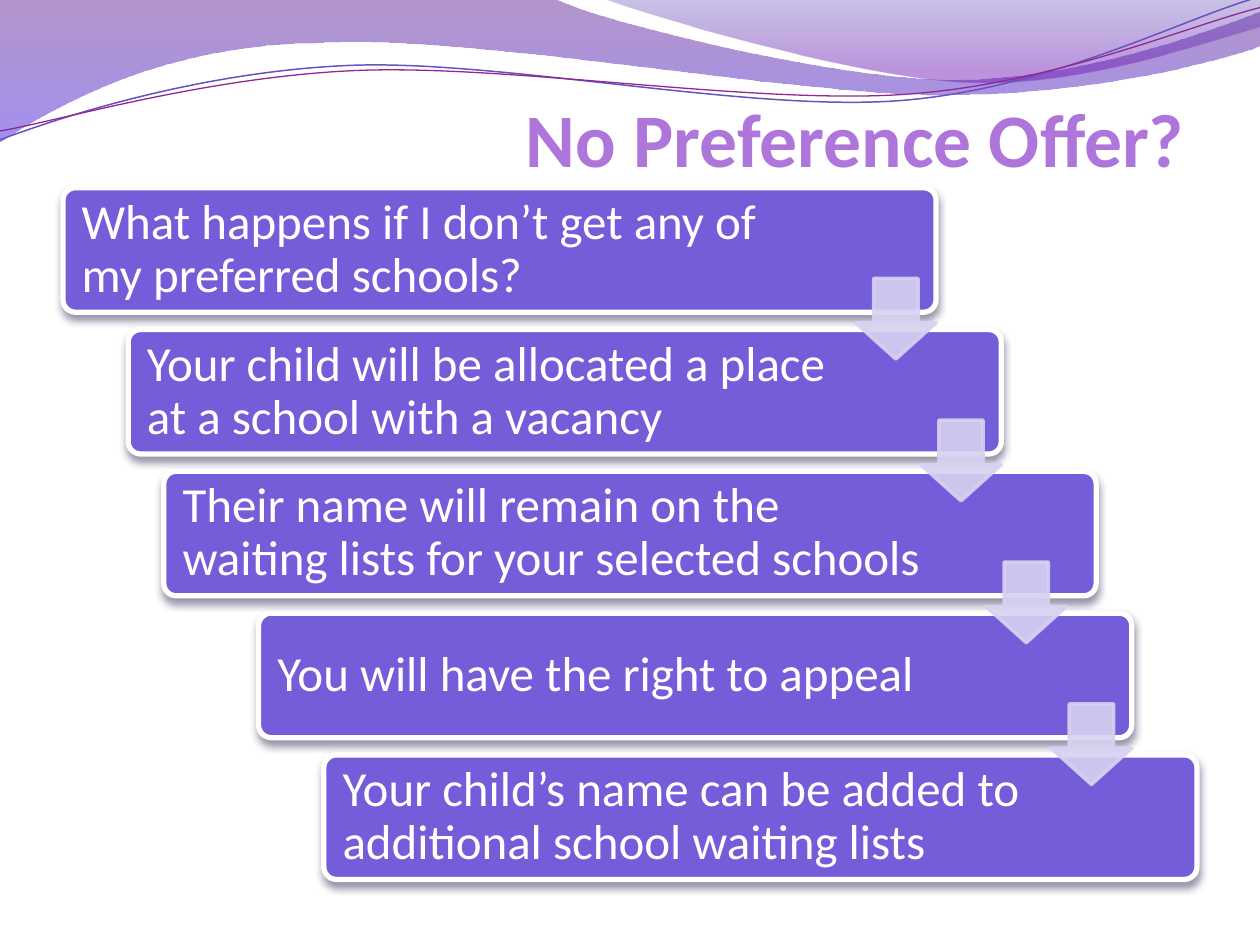
from dataclasses import dataclass

from lxml import etree
from pptx import Presentation
from pptx.dml.color import RGBColor
from pptx.enum.shapes import MSO_SHAPE
from pptx.enum.text import MSO_ANCHOR, PP_ALIGN
from pptx.oxml.ns import qn
from pptx.util import Inches, Pt

ROUNDED, DOWN_ARROW = MSO_SHAPE.ROUNDED_RECTANGLE, MSO_SHAPE.DOWN_ARROW
MIDDLE, BOTTOM = MSO_ANCHOR.MIDDLE, MSO_ANCHOR.BOTTOM
LEFT, RIGHT = PP_ALIGN.LEFT, PP_ALIGN.RIGHT
TITLE_ONLY = 5


@dataclass(frozen=True)
class Theme:
    """Colours, font and type sizes of the deck."""
    font: str = "Calibri"
    title: str = "AE76DB"
    card: str = "755DD9"
    paper: str = "FFFFFF"
    arrow: str = "D6D2F1"
    shadow: str = "28204D"
    title_size: float = 43.2
    card_size: float = 28


THEME = Theme()

BANDS = [
    ([(0, -0.01), [(4.4, -0.01)],
      [(4.76, 0.17), (6.64, 0.63), (7.58, 0.63)],
      [(8.53, 0.63), (9.58, 0.26), (10, 0.09)], [(10.01, 0.36)],
      [(9.83, 0.44), (8.7, 0.76), (7.46, 0.75)],
      [(6.22, 0.75), (3.82, 0.28), (2.57, 0.34)],
      [(1.29, 0.35), (0.46, 0.83), (-0.01, 1.13)]],
     [(0, "58188D", 45), (1, "5735E4", 55)]),
    ([(4.79, -0.01),
      [(5.09, 0.11), (6.82, 0.62), (7.69, 0.65)],
      [(8.56, 0.69), (9.61, 0.32), (10, 0.21)], [(10, 0)]],
     [(0, "4E37AE", 30), (0.8, "6A11B3", 45)]),
]
STRANDS = [
    ([(0, 1.11),
      [(0.48, 0.93), (1.58, 0.57), (2.77, 0.52)],
      [(3.95, 0.47), (5.93, 0.89), (7.13, 0.8)],
      [(8.33, 0.71), (9.38, 0.15), (9.98, -0.02)]], "6752BF", 0.85),
    ([(0, 1.04),
      [(0.47, 0.96), (1.64, 0.61), (2.83, 0.56)],
      [(4.03, 0.51), (5.97, 0.83), (7.17, 0.75)],
      [(8.36, 0.67), (9.41, 0.21), (10, 0.06)]], "92278F", 0.75),
]
STEPS = [
    ("What happens if I don’t get any of my preferred schools?", 6.93),
    ("Your child will be allocated a place at a school with a vacancy", 6.93),
    ("Their name will remain on the waiting lists for your selected schools", 7.4),
    ("You will have the right to appeal", 6.93),
    ("Your child’s name can be added to additional school waiting lists", 6.93),
]


def rgb(code):
    """Turn a hex code into a colour."""
    return RGBColor.from_string(code)


def set_opacity(shape, percents):
    """Give the colours of a shape their opacity, in order."""
    for color, percent in zip(shape.element.spPr.iter(qn("a:srgbClr")), percents):
        etree.SubElement(color, qn("a:alpha")).set("val", str(percent * 1000))


def add_shadow(shape):
    """Put a soft shadow below a shape."""
    effects = shape.element.spPr.find(qn("a:effectLst"))
    outer = etree.SubElement(effects, qn("a:outerShdw"), blurRad=str(Pt(4.5)),
                             dist=str(Pt(3)), dir="5400000", rotWithShape="0")
    color = etree.SubElement(outer, qn("a:srgbClr"), val=THEME.shadow)
    etree.SubElement(color, qn("a:alpha"), val="48000")


def add_span(para, text, size, color, bold=False):
    """Add one formatted run to a paragraph."""
    span = para.add_run()
    span.text = text
    span.font.name, span.font.size, span.font.bold = THEME.font, Pt(size), bold
    span.font.color.rgb = rgb(color)


def bend(shape, segments):
    """Join each three-point segment of a freeform into one cubic curve."""
    path = next(shape.element.spPr.iter(qn("a:path")))
    lines = iter(path.findall(qn("a:lnTo")))
    for segment in segments:
        group = [next(lines) for _ in segment]
        if len(group) == 3:
            curve = etree.Element(qn("a:cubicBezTo"))
            group[0].addprevious(curve)
            for line in group:
                curve.append(line[0])
                path.remove(line)


def add_outline(page, outline, close):
    """Draw a curved freeform without a shadow."""
    start, *segments = outline
    points = [(Inches(x), Inches(y)) for segment in segments for x, y in segment]
    builder = page.shapes.build_freeform(*map(Inches, start))
    builder.add_line_segments(points, close=close)
    shape = builder.convert_to_shape()
    shape.shadow.inherit = False
    bend(shape, segments)
    return shape


def add_band(page, outline, stops):
    """Draw one translucent gradient band."""
    band = add_outline(page, outline, True)
    band.line.fill.background()
    band.fill.gradient()
    band.fill.gradient_angle = 270
    for stop, (position, color, _) in zip(band.fill.gradient_stops, stops):
        stop.position, stop.color.rgb = position, rgb(color)
    set_opacity(band, [opacity for _, _, opacity in stops])
    return band


def add_strand(page, outline, color, width):
    """Draw one thin curved line."""
    strand = add_outline(page, outline, False)
    strand.fill.background()
    strand.line.color.rgb, strand.line.width = rgb(color), Pt(width)
    return strand


def add_waves(page, master):
    """Draw the bands and strands along the top and hand them to the master."""
    waves = [add_band(page, *band) for band in BANDS]
    waves += [add_strand(page, *strand) for strand in STRANDS]
    tree = master.shapes.element
    for index, wave in enumerate(waves):
        wave.element.nvSpPr.cNvPr.set("id", str(101 + index))
        tree.insert(2 + index, wave.element)


def add_title(page, left, top, width, height):
    """Place and fill the title placeholder."""
    title = page.shapes.title
    title.left, title.top, title.width, title.height = map(Inches, (left, top, width, height))
    frame = title.text_frame
    frame.word_wrap, frame.vertical_anchor = True, BOTTOM
    frame.margin_top, frame.margin_bottom = 0, Inches(0.04)
    para = frame.paragraphs[0]
    para.alignment = RIGHT
    add_span(para, "No Preference Offer?", THEME.title_size, THEME.title, True)


def add_block(page, kind, box, adjustments, fill, line, weight):
    """Add a filled and outlined preset shape."""
    shape = page.shapes.add_shape(kind, *map(Inches, box))
    shape.shadow.inherit = False
    for index, value in enumerate(adjustments):
        shape.adjustments[index] = value
    shape.fill.solid()
    shape.fill.fore_color.rgb = rgb(fill)
    shape.line.color.rgb, shape.line.width = rgb(line), Pt(weight)
    return shape


def add_card(page, text, box):
    """Add one step card, leaving room for the arrow on its right."""
    card = add_block(page, ROUNDED, box, [0.1], THEME.card, THEME.paper, 3)
    add_shadow(card)
    frame = card.text_frame
    frame.word_wrap, frame.vertical_anchor = True, MIDDLE
    frame.margin_left = frame.margin_top = frame.margin_bottom = Inches(0.12)
    frame.margin_right = Inches(1.32)
    para = frame.paragraphs[0]
    para.alignment, para.line_spacing = LEFT, 0.9
    add_span(para, text, THEME.card_size, THEME.paper)


def add_staircase(page, left, top, width, height):
    """Lay the cards out as descending stairs joined by arrows."""
    card_width, card_height, arrow = 0.77 * width, 0.18 * height, 0.64
    gaps = len(STEPS) - 1
    indent, pitch = (width - card_width) / gaps, (height - card_height) / gaps
    for index, (text, wide) in enumerate(STEPS):
        x = left + index * indent - (wide - card_width) / 2
        add_card(page, text, (x, top + index * pitch, wide, card_height))
    for index in range(gaps):
        x = left + index * indent + card_width - arrow
        y = top + index * pitch + 0.72
        pointer = add_block(page, DOWN_ARROW, (x, y, arrow, arrow), [0.55, 0.45],
                            THEME.arrow, THEME.arrow, 2)
        set_opacity(pointer, [90, 90])


def main():
    """Build the deck and save it."""
    deck = Presentation()
    deck.slide_width, deck.slide_height = Inches(10), Inches(7.5)
    page = deck.slides.add_slide(deck.slide_layouts[TITLE_ONLY])
    add_waves(page, deck.slide_master)
    add_title(page, 0.5, 0.68, 9, 0.81)
    add_staircase(page, 0.5, 1.49, 9, 5.49)
    deck.save("out.pptx")


if __name__ == "__main__":
    main()
